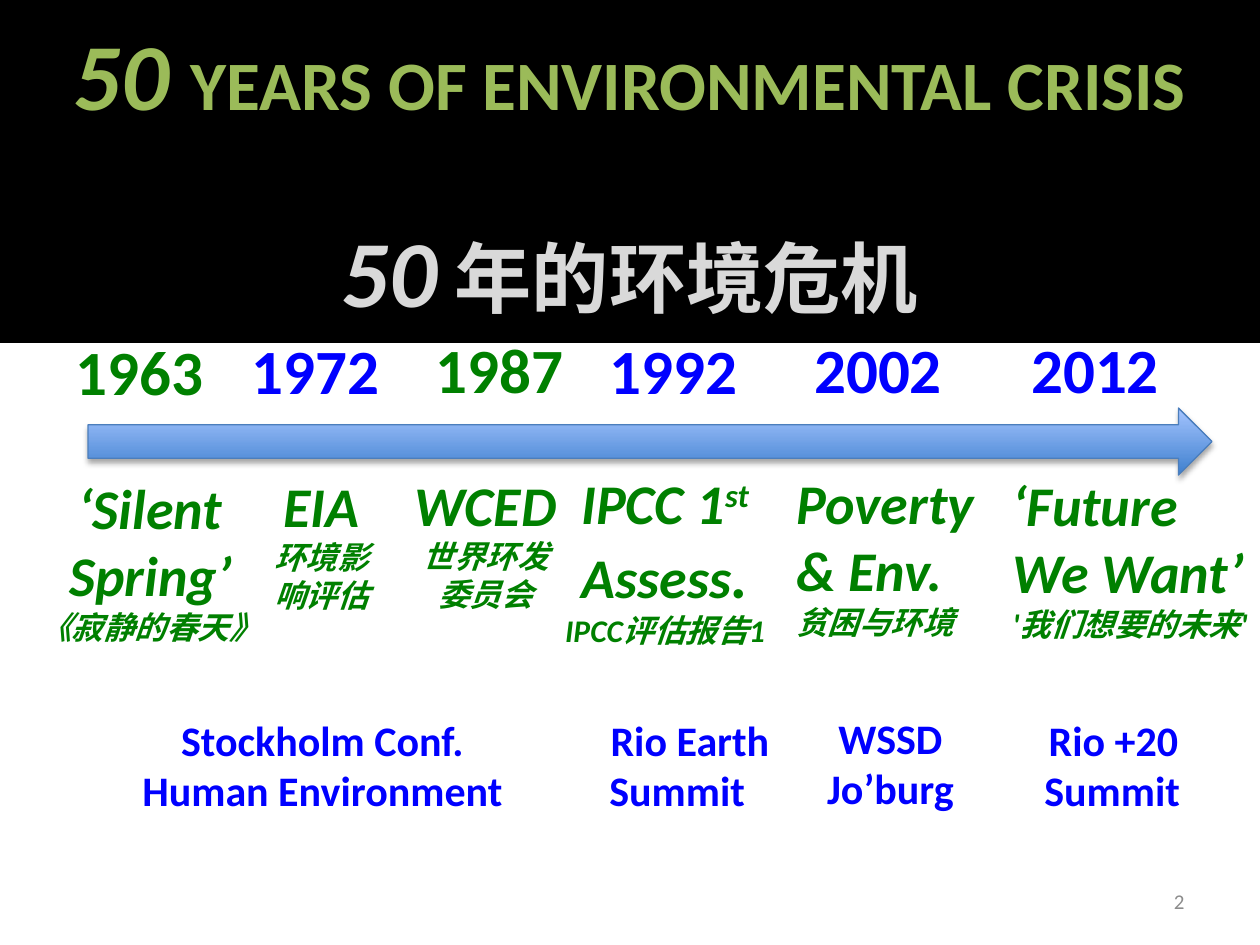
"""Build a timeline slide on fifty years of environmental crisis."""
from lxml import etree
from pptx import Presentation
from pptx.dml.color import RGBColor
from pptx.enum.shapes import MSO_SHAPE
from pptx.enum.text import MSO_ANCHOR, PP_ALIGN
from pptx.oxml.ns import qn
from pptx.util import Emu, Pt

LEFT, CENTER, RIGHT = PP_ALIGN.LEFT, PP_ALIGN.CENTER, PP_ALIGN.RIGHT
MIDDLE = MSO_ANCHOR.MIDDLE
RECTANGLE, RIGHT_ARROW = MSO_SHAPE.RECTANGLE, MSO_SHAPE.RIGHT_ARROW

BLACK = RGBColor(0x00, 0x00, 0x00)
GREEN = RGBColor(0x00, 0x80, 0x00)
BLUE = RGBColor(0x00, 0x00, 0xFF)
OLIVE = RGBColor(0x9B, 0xBB, 0x59)
SILVER = RGBColor(0xD9, 0xD9, 0xD9)
GREY = RGBColor(0x8C, 0x8C, 0x8C)
ARROW_DARK = RGBColor(0x3F, 0x80, 0xCE)
ARROW_LIGHT = RGBColor(0xA4, 0xC4, 0xFF)
ARROW_LINE = RGBColor(0x4B, 0x7E, 0xBC)

FONT = "Calibri"
PX = 914400 / 126
YEAR_SIZE, EVENT_SIZE, CHINESE_SIZE, SUMMIT_SIZE = 36, 32, 18, 24

TITLE = [
    (OLIVE, 0, [("50 ", 54, True), ("YEARS OF ENVIRONMENTAL CRISIS", 39.6, False)]),
    (SILVER, 48, [("50", 54, True), (" 年的环境危机", 44.1, False)]),
]

# left, top, width, text, colour
YEARS = [
    (63, 326, 169, "1963", GREEN),
    (239, 325, 155, "1972", BLUE),
    (423, 324, 155, "1987", GREEN),
    (597, 325, 155, "1992", BLUE),
    (802, 324, 176, "2002", BLUE),
    (1019, 324, 178, "2012", BLUE),
]

# left, top, width, height, wrap, alignment, English lines, Chinese lines
EVENTS = [
    (19, 467, 263, 186, True, CENTER, ["‘Silent Spring’"], ["《寂静的春天》"]),
    (260, 465, 123, 158, True, CENTER, ["EIA"], ["环境影响评估"]),
    (394, 464, 183, 158, False, CENTER, ["WCED"], ["世界环发", "委员会"]),
    (547, 462, 236, 195, True, CENTER,
     [("IPCC 1", "st"), "Assess"], ["IPCC评估报告1"]),
    (784, 462, 234, 186, True, LEFT, ["Poverty & Env."], ["贫困与环境"]),
    (1000, 464, 260, 186, True, LEFT,
     ["‘Future", "We Want’"], ["'我们想要的未来'"]),
]

# left, top, width, wrap, lines with alignment
SUMMITS = [
    (127, 708, 391, False, [("Stockholm Conf.", CENTER), ("Human Environment", CENTER)]),
    (597, 708, 186, False, [("Rio Earth", CENTER), ("Summit", LEFT)]),
    (802, 706, 177, True, [("WSSD", CENTER), ("Jo’burg", CENTER)]),
    (1032, 708, 163, False, [("Rio +20 ", CENTER), ("Summit", LEFT)]),
]


def px(*values):
    return [Emu(round(v * PX)) for v in values]


def style(font, size, color, bold=True, italic=False):
    font.name, font.size, font.bold, font.italic = FONT, Pt(size), bold, italic
    font.color.rgb = color


def add_box(slide, box, wrap=True):
    tf = slide.shapes.add_textbox(*px(*box)).text_frame
    tf.word_wrap = wrap
    return tf


def add_line(tf, text, size, color, align=LEFT, bold=True, italic=False):
    p = tf.paragraphs[0]
    if p.runs:
        p = tf.add_paragraph()
    p.alignment = align
    p.add_run().text = text
    style(p.font, size, color, bold, italic)
    return p


def add_title(slide):
    sp = slide.shapes.add_shape(RECTANGLE, *px(0, 0, 1260, 343))
    sp.shadow.inherit = False
    sp.fill.solid()
    sp.fill.fore_color.rgb = BLACK
    sp.line.fill.background()
    tf = sp.text_frame
    tf.word_wrap = True
    tf.vertical_anchor = MIDDLE
    for i, (color, gap, runs) in enumerate(TITLE):
        p = tf.add_paragraph() if i else tf.paragraphs[0]
        p.alignment = CENTER
        p.space_before = Pt(gap)
        for text, size, italic in runs:
            r = p.add_run()
            r.text = text
            style(r.font, size, color, italic=italic)


def add_arrow(slide):
    sp = slide.shapes.add_shape(RIGHT_ARROW, *px(88, 408, 1124, 67))
    sp.fill.gradient()
    sp.fill.gradient_angle = 90
    for stop, color in zip(sp.fill.gradient_stops, (ARROW_DARK, ARROW_LIGHT)):
        stop.color.rgb = color
    sp.line.color.rgb = ARROW_LINE
    sp.line.width = Pt(0.75)
    sp.shadow.inherit = False
    effects = sp._element.spPr.find(qn("a:effectLst"))
    shadow = etree.SubElement(effects, qn("a:outerShdw"), blurRad=str(Pt(3.1)),
                              dist=str(Pt(1.8)), dir="5400000", rotWithShape="0")
    color = etree.SubElement(shadow, qn("a:srgbClr"), val=str(BLACK))
    etree.SubElement(color, qn("a:alpha"), val="35000")


def add_event(slide, left, top, width, height, wrap, align, english, chinese):
    tf = add_box(slide, (left, top, width, height), wrap)
    for line in english:
        text, ordinal = line if isinstance(line, tuple) else (line, "")
        p = add_line(tf, text, EVENT_SIZE, GREEN, align, italic=True)
        if ordinal:
            r = p.add_run()
            r.text = ordinal
            r.font._element.set("baseline", "30000")
        if text == "Assess":
            r = p.add_run()
            r.text = "."
            r.font.size = Pt(YEAR_SIZE)
    for line in chinese:
        add_line(tf, line, CHINESE_SIZE, GREEN, align, italic=True)


def main():
    prs = Presentation()
    prs.slide_width, prs.slide_height = px(1260, 945)
    slide = prs.slides.add_slide(prs.slide_layouts[6])
    add_title(slide)
    for left, top, width, text, color in YEARS:
        add_line(add_box(slide, (left, top, width, 89)), text, YEAR_SIZE, color)
    add_arrow(slide)
    for event in EVENTS:
        add_event(slide, *event)
    for left, top, width, wrap, lines in SUMMITS:
        tf = add_box(slide, (left, top, width, 115), wrap)
        for text, align in lines:
            add_line(tf, text, SUMMIT_SIZE, BLUE, align)
    tf = add_box(slide, (903, 876, 294, 50))
    tf.vertical_anchor = MIDDLE
    add_line(tf, "2", 12, GREY, RIGHT, bold=False)
    prs.save("out.pptx")


if __name__ == "__main__":
    main()
